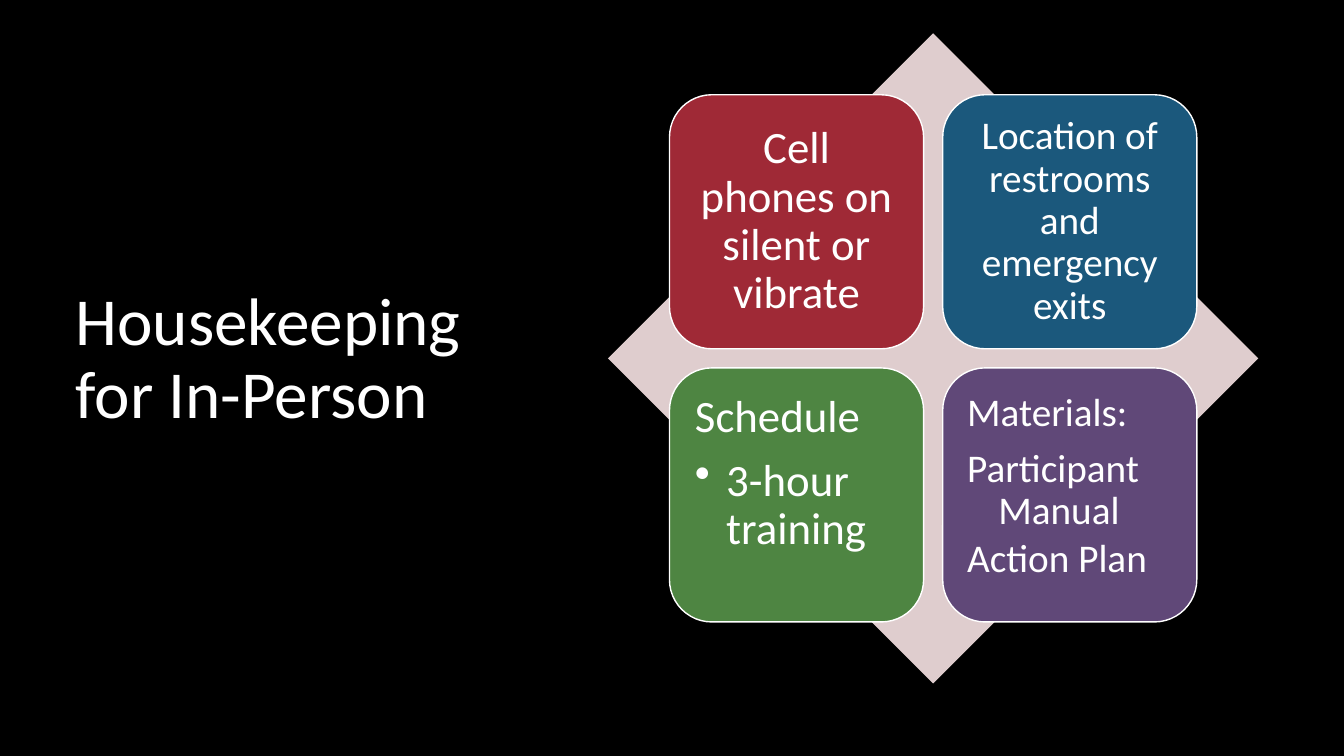
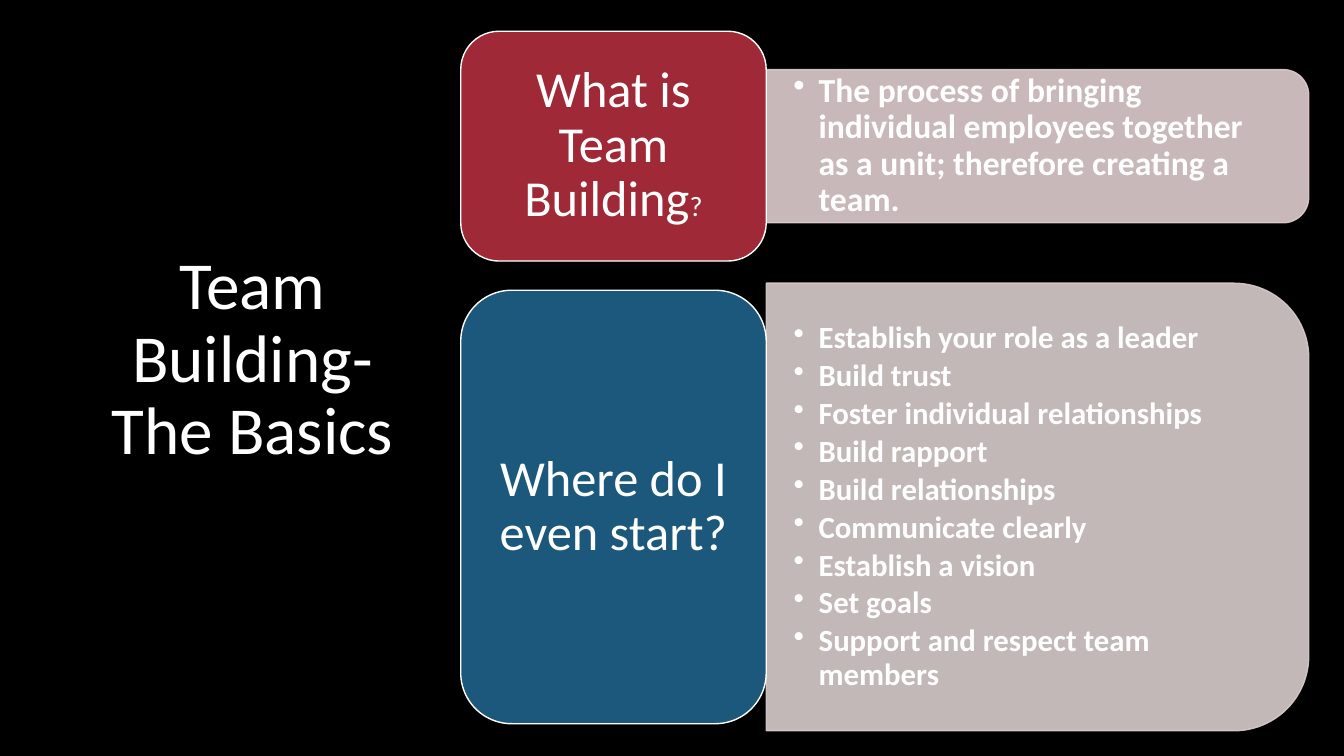
from lxml import etree
from pptx import Presentation
from pptx.dml.color import RGBColor
from pptx.enum import shapes, text
from pptx.oxml.ns import qn
from pptx.util import Inches, Pt

BLACK = RGBColor(0x00, 0x00, 0x00)
WHITE = RGBColor(0xFF, 0xFF, 0xFF)
RED = RGBColor(0x9F, 0x29, 0x36)
BLUE = RGBColor(0x1B, 0x58, 0x7C)
GREEN = RGBColor(0x4E, 0x85, 0x42)
PURPLE = RGBColor(0x60, 0x48, 0x78)
PINK = RGBColor(0xDF, 0xCD, 0xCE)
GREY = RGBColor(0xD6, 0xCD, 0xCB)

FONT = "Calibri"
SHAPE = shapes.MSO_SHAPE
ALIGN = text.PP_ALIGN
ANCHOR = text.MSO_ANCHOR


def style(para, size, align=ALIGN.LEFT, after=0.0, bold=False):
    """Format a paragraph; after is a share of the text size."""
    para.alignment = align
    para.line_spacing = 0.9
    para.space_before = Pt(0)
    para.space_after = Pt(round(size * after, 1))
    for run in para.runs:
        run.font.name = FONT
        run.font.size = Pt(size)
        run.font.bold = bold
        run.font.color.rgb = WHITE


def hang(para, depth, bullet):
    """Give a list item a hanging indent, with or without a bullet."""
    para.level = 1
    props = para._p.get_or_add_pPr()
    props.set("marL", str(Inches(depth)))
    props.set("indent", str(-Inches(depth)))
    if bullet:
        etree.SubElement(props, qn("a:buChar")).set("char", "•")


def frame(shape, side, end, anchor=ANCHOR.MIDDLE):
    """Set the insets and anchor of a shape's text and return its frame."""
    body = shape.text_frame
    body.word_wrap = True
    body.vertical_anchor = anchor
    body.margin_left = body.margin_right = Inches(side)
    body.margin_top = body.margin_bottom = Inches(end)
    return body


def block(slide, kind, box, fill, line=None):
    shape = slide.shapes.add_shape(kind, *map(Inches, box))
    shape.shadow.inherit = False
    shape.fill.solid()
    shape.fill.fore_color.rgb = fill
    if line is None:
        shape.line.fill.background()
    else:
        shape.line.color.rgb = line
        shape.line.width = Pt(1)
    return shape


def start(deck, name, width, align):
    """Add a slide with its title in a column on the left."""
    slide = deck.slides.add_slide(deck.slide_layouts[5])
    title = slide.shapes.title
    title.left, title.top = Inches(0.65), Inches(0.7)
    title.width, title.height = Inches(width), Inches(5.75)
    body = frame(title, 0.1, 0.05)
    body.text = name
    style(body.paragraphs[0], 48, align)
    return slide


def tile(slide, box, fill, size, head, items, bullet):
    shape = block(slide, SHAPE.ROUNDED_RECTANGLE, box, fill, WHITE)
    inset = 0.13 if size > 30 else 0.12
    body = frame(shape, inset, inset, ANCHOR.TOP if items else ANCHOR.MIDDLE)
    body.text = "\n".join([head, *items])
    first, *rest = body.paragraphs
    style(first, size, ALIGN.LEFT if items else ALIGN.CENTER, 0.35)
    for para in rest:
        style(para, size, after=0.15)
        hang(para, 0.31, bullet)


def matrix(slide, left, top, side, tiles):
    """Draw a diamond with a two by two grid of tiles about its centre."""
    block(slide, SHAPE.DIAMOND, (left, top, side, side), PINK)
    size, gap = 2.52, 0.19
    inset = (side - 2 * size - gap) / 2
    for i, parts in enumerate(tiles):
        row, col = divmod(i, 2)
        x = left + inset + col * (size + gap)
        y = top + inset + row * (size + gap)
        tile(slide, (x, y, size, size), *parts)


def panel(slide, box, fill, size, items):
    """Draw a bulleted panel whose right corners are round."""
    left, top, width, height = box
    turned = (left + (width - height) / 2, top + (height - width) / 2,
              height, width)
    shape = block(slide, SHAPE.ROUND_2_SAME_RECTANGLE, turned, fill, fill)
    shape.rotation = 90
    for color in shape._element.spPr.iter(qn("a:srgbClr")):
        etree.SubElement(color, qn("a:alpha")).set("val", "90000")

    inset = 0.05 * height
    area = (left, top + inset, width - inset, height - 2 * inset)
    body = frame(slide.shapes.add_textbox(*map(Inches, area)), 0.27, 0.14)
    body.text = "\n".join(items)
    for para in body.paragraphs:
        style(para, size, after=0.15, bold=True)
        hang(para, 0.25, True)


def label(slide, box, fill, words, mark=""):
    """Draw a topic box; mark is a small ending to its words."""
    shape = block(slide, SHAPE.ROUNDED_RECTANGLE, box, fill, WHITE)
    body = frame(shape, 0.15, 0.07)
    body.text = words
    para = body.paragraphs[0]
    if mark:
        para.add_run().text = mark
    style(para, 36, ALIGN.CENTER, 0.35)
    if mark:
        para.runs[-1].font.size = Pt(20)


def house(deck):
    slide = start(deck, "Housekeeping for In-Person", 4.16, ALIGN.LEFT)
    matrix(slide, 6.03, 0.33, 6.45, [
        (RED, 32, "Cell phones on silent or vibrate", [], False),
        (BLUE, 28, "Location of restrooms and emergency exits", [], False),
        (GREEN, 32, "Schedule", ["3-hour training"], True),
        (PURPLE, 28, "Materials:",
         ["Participant Manual", "Action Plan"], False),
    ])


def basics(deck):
    slide = start(deck, "Team Building-\vThe Basics", 3.71, ALIGN.CENTER)
    left, width = 4.57, 3.03
    edge, span = left + width, 5.38
    panel(slide, (edge, 0.69, span, 1.52), PINK, 24, [
        "The process of bringing individual employees together as a unit; "
        "therefore creating a team.",
    ])
    label(slide, (left, 0.31, width, 2.28), RED, "What is Team Building", "?")
    panel(slide, (edge, 2.81, span, 4.44), GREY, 22, [
        "Establish your role as a leader",
        "Build trust",
        "Foster individual relationships",
        "Build rapport",
        "Build relationships",
        "Communicate clearly",
        "Establish a vision",
        "Set goals",
        "Support and respect team members",
    ])
    label(slide, (left, 2.88, width, 4.3), BLUE, "Where do I even start?")


def main():
    deck = Presentation()
    deck.slide_width, deck.slide_height = Inches(13.33), Inches(7.5)
    back = deck.slide_master.background.fill
    back.solid()
    back.fore_color.rgb = BLACK
    house(deck)
    basics(deck)
    deck.save("out.pptx")


if __name__ == "__main__":
    main()
